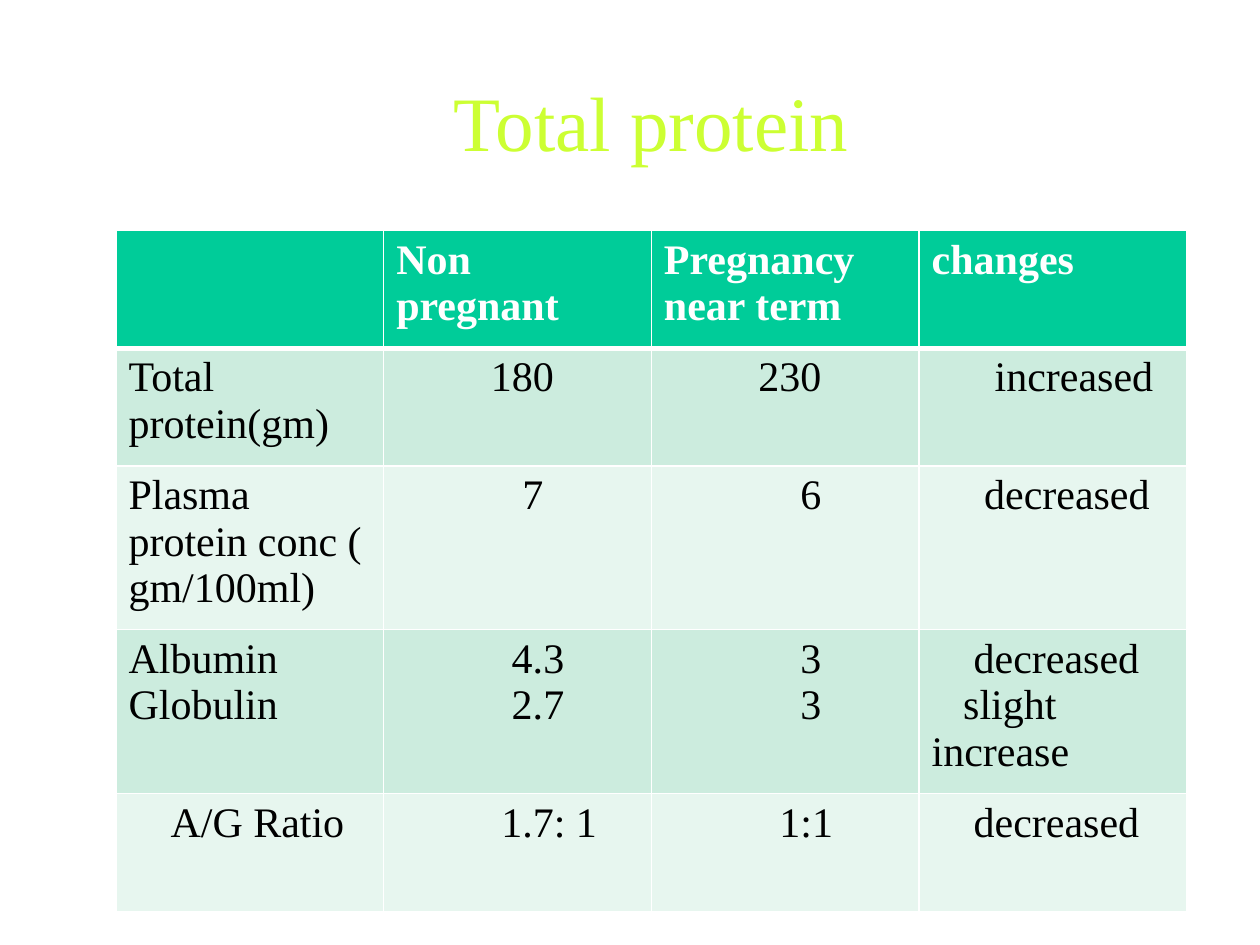
from lxml.etree import SubElement
from pptx import Presentation
from pptx.dml.color import RGBColor
from pptx.enum.text import MSO_ANCHOR as Anchor, PP_ALIGN as Align
from pptx.oxml.ns import qn
from pptx.util import Inches, Pt

FONT = "Times New Roman"
WHITE, BLACK, LIME, GREEN = "FFFFFF", "000000", "CCFF33", "00CC99"
BANDS = ["CCECDE", "E7F6EF"]
STEP = Pt(6)
HEADER = ["", "Non pregnant", "Pregnancy near term", "changes"]
# Each body line is its text and its first-line indent in steps.
BODY = [
    [[("Total protein(gm)", 0)], [("180", 9)], [("230", 9)], [("increased", 6)]],
    [[("Plasma protein conc ( gm/100ml)", 0)], [("7", 12)], [("6", 13)],
     [("decreased", 5)]],
    [[("Albumin", 0), ("Globulin", 0)], [("4.3", 11), ("2.7", 11)],
     [("3", 13), ("3", 13)], [("decreased", 4), ("slight increase", 3)]],
    [[("A/G Ratio", 4)], [("1.7: 1", 10)], [("1:1", 11)], [("decreased", 4)]],
]


def rgb(value):
    return RGBColor.from_string(value)


def write(para, text, size=24, color=BLACK, bold=False, align=Align.LEFT,
          indent=0, shadow=False):
    para.alignment = align
    if indent:
        layout = para._p.get_or_add_pPr()
        layout.set("marL", "0")
        layout.set("indent", str(indent * STEP))
    span = para.add_run()
    span.text = text
    font = span.font
    font.size, font.bold = Pt(size), bold
    font.color.rgb = rgb(color)
    if shadow:
        effects = SubElement(span._r.get_or_add_rPr(), qn("a:effectLst"))
        outer = SubElement(effects, qn("a:outerShdw"), dist=str(Pt(3)), dir="2700000")
        SubElement(outer, qn("a:srgbClr"), val=BLACK)
    font.name = FONT


def set_borders(cell, top=1, bottom=1):
    properties = cell._tc.get_or_add_tcPr()
    widths = {"a:lnL": 1, "a:lnR": 1, "a:lnT": top, "a:lnB": bottom}
    for place, (tag, width) in enumerate(widths.items()):
        line = SubElement(properties, qn(tag), w=str(Pt(width)))
        SubElement(SubElement(line, qn("a:solidFill")), qn("a:srgbClr"), val=WHITE)
        properties.insert(place, line)


def fill_cell(cell, lines, fill, color=BLACK, bold=False, **borders):
    cell.fill.solid()
    cell.fill.fore_color.rgb = rgb(fill)
    set_borders(cell, **borders)
    frame = cell.text_frame
    for place, (text, indent) in enumerate(lines):
        para = frame.add_paragraph() if place else frame.paragraphs[0]
        write(para, text, color=color, bold=bold, indent=indent)


def add_title(page, left, top, width, height):
    box = page.shapes.add_textbox(left, top, width, height)
    frame = box.text_frame
    frame.word_wrap = True
    frame.vertical_anchor = Anchor.MIDDLE
    write(frame.paragraphs[0], "Total protein", size=44, color=LIME,
          align=Align.CENTER, shadow=True)


def add_protein_table(page, left, top, width, height):
    rows, columns = len(BODY) + 1, len(HEADER)
    table = page.shapes.add_table(rows, columns, left, top, width, height).table
    table.first_row = table.horz_banding = False
    for column, text in enumerate(HEADER):
        lines = [(text, 0)] if text else []
        fill_cell(table.cell(0, column), lines, GREEN, WHITE, True, bottom=3)
    for row, entries in enumerate(BODY):
        for column, lines in enumerate(entries):
            fill_cell(table.cell(row + 1, column), lines, BANDS[row % 2],
                      top=1 if row else 3)


def main():
    deck = Presentation()
    deck.slide_width, deck.slide_height = Inches(10), Inches(7.5)
    page = deck.slides.add_slide(deck.slide_layouts[6])
    left, width = Inches(0.92), Inches(8.5)
    add_title(page, left, Inches(0.33), width, Inches(1.25))
    add_protein_table(page, left, Inches(1.83), width, Inches(4.67))
    deck.save("out.pptx")


if __name__ == "__main__":
    main()
